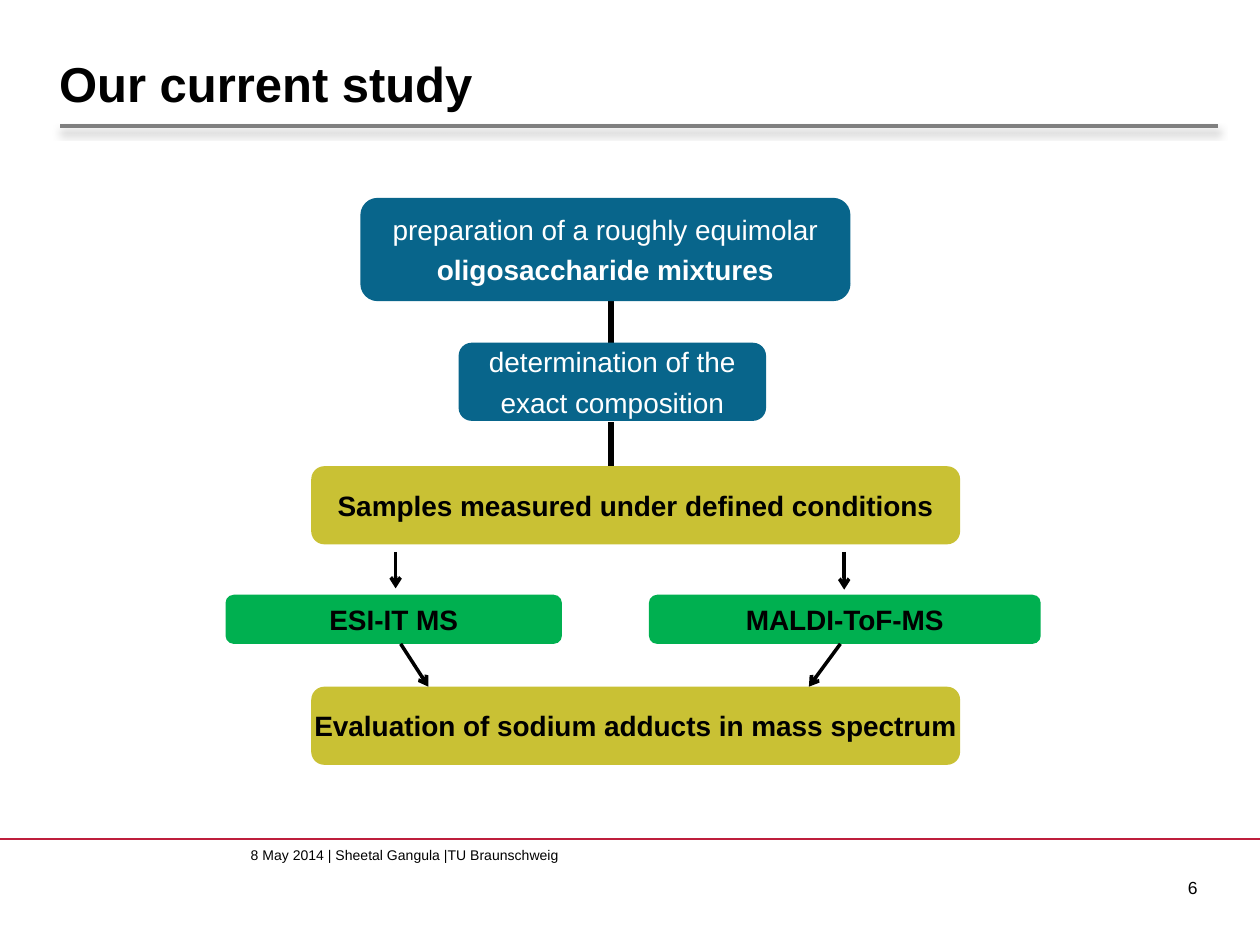
from lxml import etree
from pptx import Presentation
from pptx.dml.color import RGBColor
from pptx.enum.shapes import MSO_CONNECTOR, MSO_SHAPE
from pptx.enum.text import MSO_ANCHOR as Anchor, PP_ALIGN as Align
from pptx.oxml import parse_xml
from pptx.oxml.ns import nsdecls, qn
from pptx.util import Inches, Pt

BLACK = RGBColor(0x00, 0x00, 0x00)
WHITE = RGBColor(0xFF, 0xFF, 0xFF)
GREY = RGBColor(0x80, 0x80, 0x80)
RED = RGBColor(0xBE, 0x1E, 0x3C)
BLUE = RGBColor(0x08, 0x65, 0x8B)
OLIVE = RGBColor(0xC9, 0xC1, 0x34)
GREEN = RGBColor(0x00, 0xB0, 0x50)

FONT = "Arial"
COLUMNS, ROWS = 100, 75

TITLE = "Our current study"
FOOTER = "8 May 2014 | Sheetal Gangula |TU Braunschweig"
PAGE = "6"

STEPS = [
    ((28.6, 15.7, 38.9, 8.2), BLUE, WHITE,
     [("preparation of a roughly equimolar", False), ("oligosaccharide mixtures", True)]),
    ((36.4, 27.2, 24.4, 6.2), BLUE, WHITE,
     [("determination of the", False), ("exact composition", False)]),
    ((24.7, 37, 51.5, 6.2), OLIVE, BLACK, [("Samples measured under defined conditions", True)]),
    ((17.9, 47.2, 26.7, 3.9), GREEN, BLACK, [("ESI-IT MS", True)]),
    ((51.5, 47.2, 31.1, 3.9), GREEN, BLACK, [("MALDI-ToF-MS", True)]),
    ((24.7, 54.5, 51.5, 6.2), OLIVE, BLACK, [("Evaluation of sodium adducts in mass spectrum", True)]),
]
LINKS = [((48.5, 23.8), (48.5, 27.8)), ((48.5, 33.5), (48.5, 37.4))]
ARROWS = [
    ((31.4, 43.8), (31.4, 46.7)),
    ((67, 43.8), (67, 46.8)),
    ((31.8, 51.1), (34, 54.5)),
    ((66.7, 51.1), (64.2, 54.5)),
]

deck = Presentation()
deck.slide_width, deck.slide_height = Inches(10), Inches(7.5)
slide = deck.slides.add_slide(deck.slide_layouts[6])


def across(columns):
    return round(deck.slide_width * columns / COLUMNS)


def down(rows):
    return round(deck.slide_height * rows / ROWS)


def place(area):
    left, top, width, height = area
    return across(left), down(top), across(width), down(height)


def add_line(start, end, color, weight, arrow=False, shadow=False):
    line = slide.shapes.add_connector(
        MSO_CONNECTOR.STRAIGHT, across(start[0]), down(start[1]), across(end[0]), down(end[1]))
    line.line.color.rgb = color
    line.line.width = Pt(weight)
    if arrow:
        etree.SubElement(line.line._get_or_add_ln(), qn("a:tailEnd"), type="arrow")
    cast = (
        f'<a:outerShdw blurRad="{Pt(4)}" dist="{Pt(3)}" dir="5400000" rotWithShape="0">'
        '<a:srgbClr val="000000"><a:alpha val="40000"/></a:srgbClr></a:outerShdw>'
    ) if shadow else ""
    line._element.spPr.append(parse_xml(f'<a:effectLst {nsdecls("a")}>{cast}</a:effectLst>'))


def write(frame, lines, size, color, align=Align.LEFT, anchor=Anchor.TOP, inset=(0, 0), wrap=False):
    frame.word_wrap = wrap
    frame.vertical_anchor = anchor
    frame.margin_left = frame.margin_right = Inches(inset[0])
    frame.margin_top = frame.margin_bottom = Inches(inset[1])
    for index, (words, bold) in enumerate(lines):
        paragraph = frame.add_paragraph() if index else frame.paragraphs[0]
        paragraph.alignment = align
        if index:
            paragraph.space_before = Pt(size * 0.24)
        run = paragraph.add_run()
        run.text = words
        run.font.name, run.font.size = FONT, Pt(size)
        run.font.bold, run.font.color.rgb = bold, color


def add_label(area, words, size, bold=False, **layout):
    write(slide.shapes.add_textbox(*place(area)).text_frame, [(words, bold)], size, BLACK, **layout)


def add_step(area, fill, ink, lines):
    box = slide.shapes.add_shape(MSO_SHAPE.ROUNDED_RECTANGLE, *place(area))
    box.shadow.inherit = False
    box.fill.solid()
    box.fill.fore_color.rgb = fill
    box.line.fill.background()
    write(box.text_frame, lines, 16, ink, Align.CENTER, Anchor.MIDDLE)


add_line((0, 66.6), (COLUMNS, 66.6), RED, 0.75)
add_label((19.9, 67.2, 27.7, 1.3), FOOTER, 8)
add_line((4.8, 10), (96.7, 10), GREY, 2.25, shadow=True)
add_label((4.7, 1.2, 91.6, 7.7), TITLE, 28, bold=True, anchor=Anchor.BOTTOM, wrap=True)
for start, end in LINKS:
    add_line(start, end, BLACK, 3)
for step in STEPS:
    add_step(*step)
for start, end in ARROWS:
    add_line(start, end, BLACK, 2, arrow=True)
add_label((93.3, 69.1, 2.4, 2.7), PAGE, 10, inset=(0.1, 0.05))

deck.save("out.pptx")
